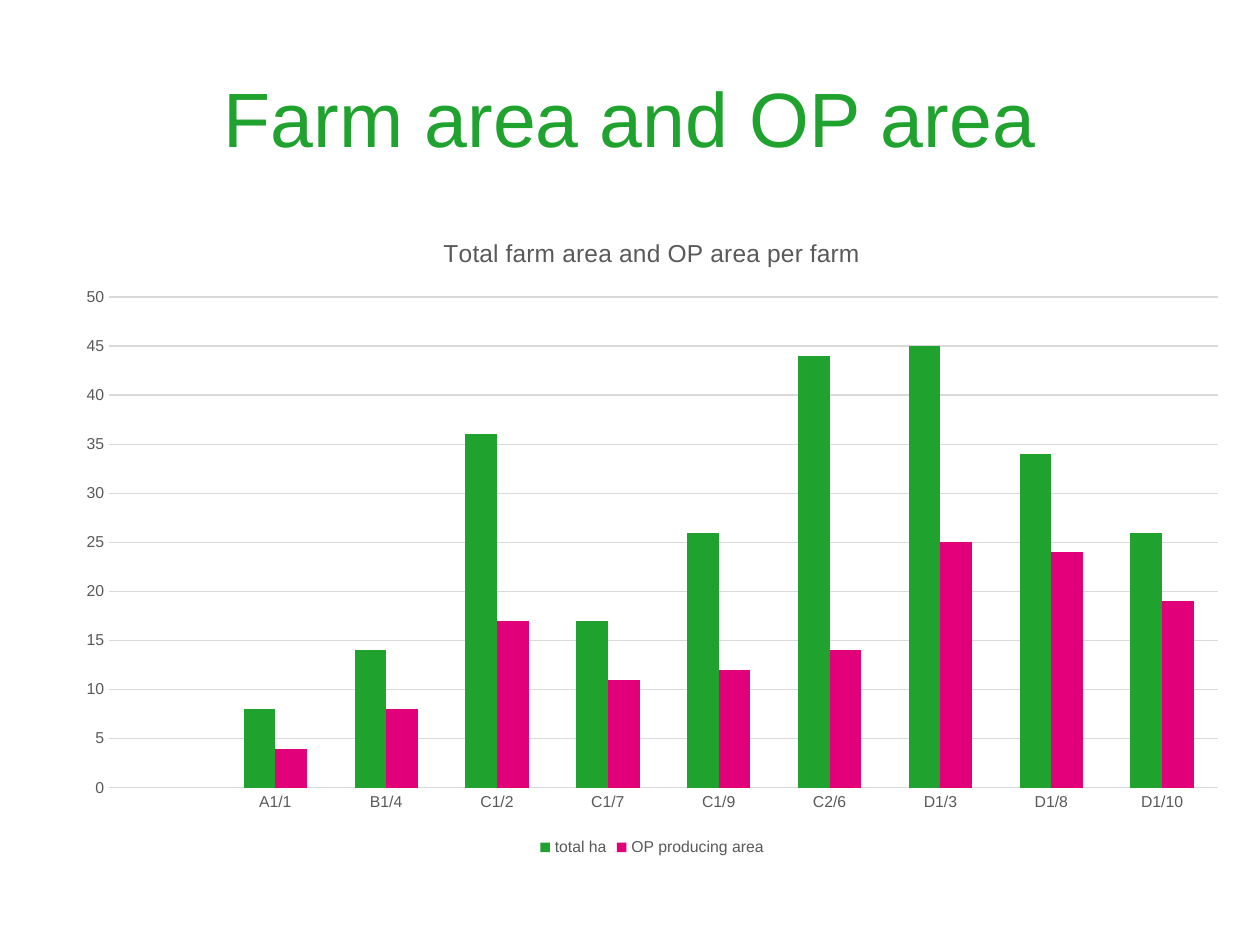
from dataclasses import dataclass

from pptx import Presentation
from pptx.chart.axis import CategoryAxis, ValueAxis
from pptx.chart.chart import Chart
from pptx.chart.data import CategoryChartData
from pptx.dml.color import RGBColor
from pptx.enum.chart import XL_CHART_TYPE, XL_LEGEND_POSITION, XL_TICK_MARK
from pptx.enum.text import MSO_ANCHOR, PP_ALIGN
from pptx.slide import Slide
from pptx.text.text import Font
from pptx.util import Cm, Pt

COLUMNS = XL_CHART_TYPE.COLUMN_CLUSTERED
LEGEND_BOTTOM = XL_LEGEND_POSITION.BOTTOM
NO_TICKS = XL_TICK_MARK.NONE
MIDDLE = MSO_ANCHOR.MIDDLE
CENTER = PP_ALIGN.CENTER

GREEN = RGBColor(0x1F, 0xA2, 0x2E)
PINK = RGBColor(0xE2, 0x00, 0x7A)
GRAY = RGBColor(0x59, 0x59, 0x59)
GRID_GRAY = RGBColor(0xD9, 0xD9, 0xD9)
FONT_NAME = "Arial"
NUMBER_FORMAT = "#,##0"


@dataclass(frozen=True)
class AreaSeries:
    name: str
    hectares: tuple[int | None, ...]
    color: RGBColor


# The first category is an empty slot before the farms.
FARMS = ("", "A1/1", "B1/4", "C1/2", "C1/7", "C1/9", "C2/6", "D1/3", "D1/8", "D1/10")
AREAS = (
    AreaSeries("total ha", (None, 8, 14, 36, 17, 26, 44, 45, 34, 26), GREEN),
    AreaSeries("OP producing area", (None, 4, 8, 17, 11, 12, 14, 25, 24, 19), PINK),
)


def style_font(font: Font, size: float, color: RGBColor) -> None:
    font.name = FONT_NAME
    font.size = Pt(size)
    font.bold = False
    font.color.rgb = color


def add_title(slide: Slide, text: str) -> None:
    title = slide.shapes.title
    title.left, title.top = Cm(1.27), Cm(0.76)
    title.width, title.height = Cm(22.86), Cm(3.18)
    title.text_frame.vertical_anchor = MIDDLE
    paragraph = title.text_frame.paragraphs[0]
    paragraph.alignment = CENTER
    run = paragraph.add_run()
    run.text = text
    style_font(run.font, 44, GREEN)


def style_axis(axis: CategoryAxis | ValueAxis) -> None:
    axis.major_tick_mark = NO_TICKS
    axis.minor_tick_mark = NO_TICKS
    axis.format.line.fill.background()
    style_font(axis.tick_labels.font, 9, GRAY)


def style_value_axis(axis: ValueAxis) -> None:
    style_axis(axis)
    axis.minimum_scale, axis.maximum_scale, axis.major_unit = 0, 50, 5
    axis.tick_labels.number_format = NUMBER_FORMAT
    axis.tick_labels.number_format_is_linked = False
    axis.has_major_gridlines = True
    grid_line = axis.major_gridlines.format.line
    grid_line.color.rgb = GRID_GRAY
    grid_line.width = Pt(0.75)


def add_chart_title(chart: Chart, text: str) -> None:
    chart.has_title = True
    run = chart.chart_title.text_frame.paragraphs[0].add_run()
    run.text = text
    style_font(run.font, 14, GRAY)
    chart.chart_title.include_in_layout = False


def add_area_chart(slide: Slide) -> None:
    chart_data = CategoryChartData(number_format=NUMBER_FORMAT)
    chart_data.categories = FARMS
    for area in AREAS:
        chart_data.add_series(area.name, area.hectares)
    frame = slide.shapes.add_chart(
        COLUMNS, Cm(1.27), Cm(4.29), Cm(23.75), Cm(13.08), chart_data
    )
    chart = frame.chart
    chart.font.name = FONT_NAME
    chart.font.size = Pt(10)
    add_chart_title(chart, "Total farm area and OP area per farm")

    style_axis(chart.category_axis)
    style_value_axis(chart.value_axis)

    chart.has_legend = True
    chart.legend.position = LEGEND_BOTTOM
    chart.legend.include_in_layout = False
    style_font(chart.legend.font, 9, GRAY)

    plot = chart.plots[0]
    plot.gap_width = 150
    plot.overlap = 0
    plot.vary_by_categories = False
    for series, area in zip(plot.series, AREAS):
        series.format.fill.solid()
        series.format.fill.fore_color.rgb = area.color
        series.invert_if_negative = False


def main() -> None:
    presentation = Presentation()
    presentation.slide_width = Cm(25.4)
    presentation.slide_height = Cm(19.05)
    title_only_layout = presentation.slide_layouts[5]
    slide = presentation.slides.add_slide(title_only_layout)
    add_title(slide, "Farm area and OP area")
    add_area_chart(slide)
    presentation.save("out.pptx")


if __name__ == "__main__":
    main()
